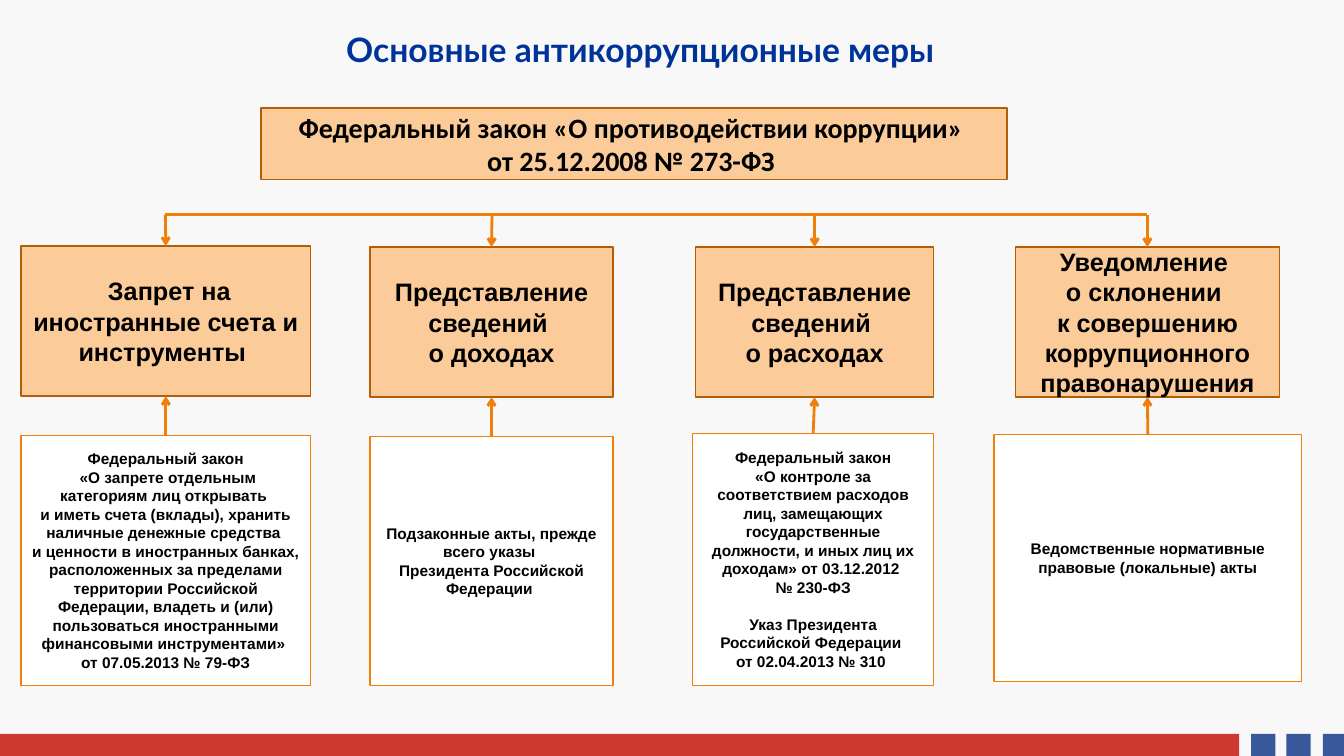
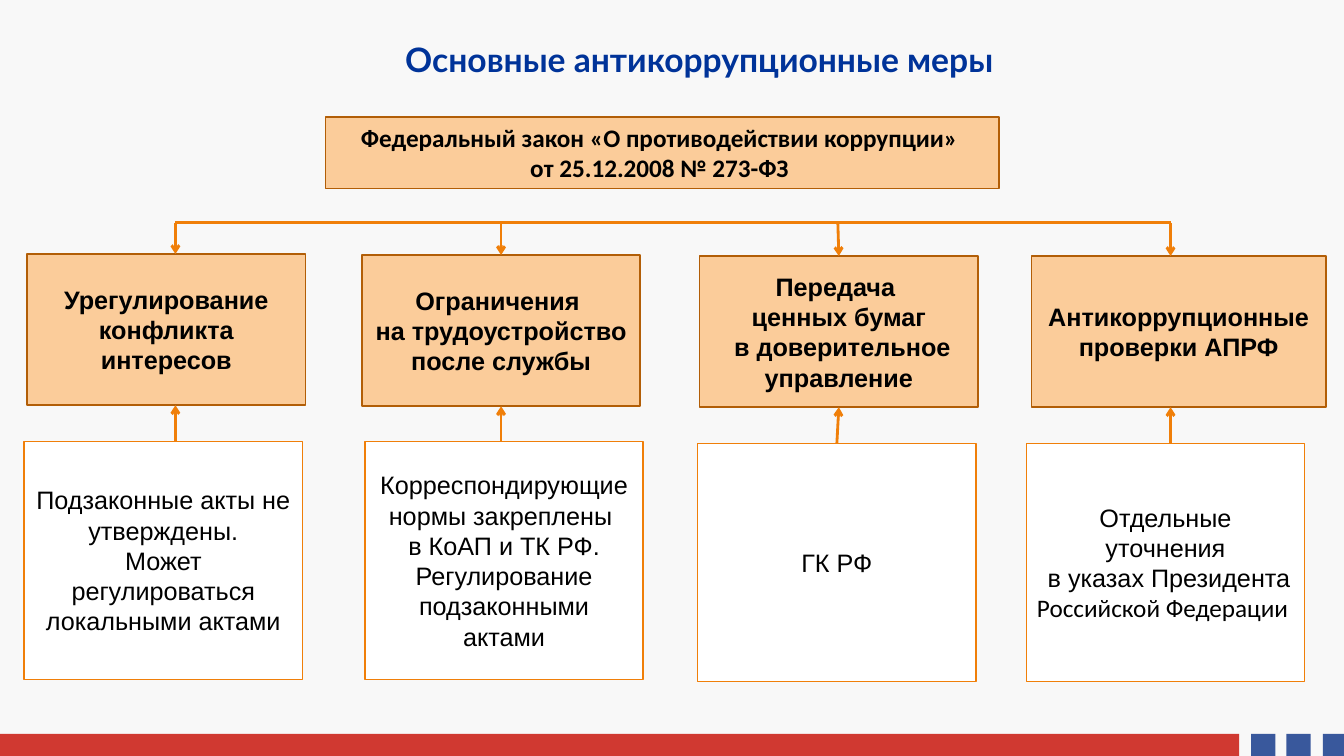
import dataclasses

import pptx
import pptx.dml.color
import pptx.enum.shapes
import pptx.enum.text
import pptx.oxml.ns
import pptx.oxml.xmlchemy
import pptx.shapes.autoshape
import pptx.shapes.connector
import pptx.slide
import pptx.text.text
import pptx.util

PX = 9144
SLIDE_WIDTH, SLIDE_HEIGHT = 1333, 750
BACKGROUND, BLACK, WHITE = "F8F8F8", "000000", "FFFFFF"
TITLE_BLUE, BAND_RED, BAND_BLUE = "003399", "C70A00", "0A3085"
PEACH, BROWN, ORANGE = "FBCC9A", "B25E07", "F07F09"
BAND_TOP, BAND_HEIGHT, BAND_OPACITY = 728, 22, 80
JOIN_TOLERANCE = 2
TITLE = "Основные антикоррупционные меры"
LAW = "Федеральный закон «О противодействии коррупции» \vот 25.12.2008 № 273-ФЗ "


@dataclasses.dataclass(frozen=True)
class Area:
    left: int
    top: int
    width: int
    height: int

    @property
    def middle(self) -> int:
        return self.left + self.width // 2

    @property
    def bottom(self) -> int:
        return self.top + self.height


@dataclasses.dataclass(frozen=True)
class Style:
    fill: str
    line: str
    size: int
    bold: bool = True
    font: str = "Arial"
    gap: int = 0


@dataclasses.dataclass(frozen=True)
class Box:
    area: Area
    text: str
    calibri_ending: str = ""


@dataclasses.dataclass(frozen=True)
class Column:
    axis: int
    measure: Box
    act: Box


@dataclasses.dataclass(frozen=True)
class Scheme:
    title: Area
    law: Area
    law_size: int
    bus_top: int
    act_style: Style
    columns: tuple[Column, ...]


MEASURE_STYLE = Style(PEACH, BROWN, 18)

SCHEMES = (
    Scheme(
        title=Area(157, 29, 956, 39),
        law=Area(259, 107, 740, 71),
        law_size=20,
        bus_top=213,
        act_style=Style(WHITE, ORANGE, 11, gap=13),
        columns=(
            Column(
                164,
                Box(Area(21, 244, 287, 149), " Запрет на иностранные счета и инструменты "),
                Box(
                    Area(21, 432, 287, 248),
                    "Федеральный закон\v «О запрете отдельным категориям лиц открывать \v"
                    "и иметь счета (вклады), хранить наличные денежные средства \v"
                    "и ценности в иностранных банках, расположенных за пределами территории "
                    "Российской Федерации, владеть и (или) пользоваться иностранными "
                    "финансовыми инструментами» \vот 07.05.2013 № 79-ФЗ",
                ),
            ),
            Column(
                488,
                Box(Area(367, 245, 241, 149), "Представление сведений \vо доходах"),
                Box(
                    Area(367, 433, 241, 247),
                    "Подзаконные акты, прежде всего указы \vПрезидента Российской Федерации ",
                ),
            ),
            Column(
                808,
                Box(Area(690, 245, 236, 149), "Представление сведений \vо расходах"),
                Box(
                    Area(687, 430, 239, 250),
                    "Федеральный закон\v«О контроле за соответствием расходов лиц, замещающих "
                    "государственные должности, и иных лиц их доходам» от 03.12.2012 \v№ 230-ФЗ\n"
                    "Указ Президента Российской Федерации \vот 02.04.2013 № 310 ",
                ),
            ),
            Column(
                1138,
                Box(
                    Area(1007, 245, 262, 149),
                    "Уведомление \vо склонении \vк совершению коррупционного правонарушения",
                ),
                Box(
                    Area(986, 431, 305, 245),
                    "Ведомственные нормативные правовые (локальные) акты",
                ),
            ),
        ),
    ),
    Scheme(
        title=Area(94, 16, 1199, 86),
        law=Area(323, 116, 668, 71),
        law_size=18,
        bus_top=221,
        act_style=Style(WHITE, ORANGE, 18, bold=False),
        columns=(
            Column(
                174,
                Box(Area(27, 252, 276, 150), "Урегулирование конфликта интересов"),
                Box(
                    Area(24, 438, 276, 236),
                    "Подзаконные акты не утверждены.\nМожет регулироваться локальными актами",
                ),
            ),
            Column(
                497,
                Box(Area(359, 253, 276, 150), "Ограничения \vна трудоустройство после службы"),
                Box(
                    Area(362, 438, 276, 236),
                    "Корреспондирующие нормы закреплены \n"
                    "в КоАП и ТК РФ. Регулирование подзаконными актами",
                ),
            ),
            Column(
                831,
                Box(Area(694, 254, 276, 150), "Передача \vценных бумаг\n в доверительное управление"),
                Box(Area(692, 440, 276, 236), "ГК РФ"),
            ),
            Column(
                1161,
                Box(Area(1023, 254, 292, 150), "Антикоррупционные проверки АПРФ"),
                Box(
                    Area(1018, 440, 276, 236),
                    "Отдельные уточнения\n в указах Президента ",
                    "Российской Федерации ",
                ),
            ),
        ),
    ),
)


def color(value: str) -> pptx.dml.color.RGBColor:
    return pptx.dml.color.RGBColor.from_string(value)


def format_text(
    text_frame: pptx.text.text.TextFrame, font: str, size: int, bold: bool, text_color: str, gap: int = 0
) -> None:
    text_frame.word_wrap = True
    text_frame.auto_size = pptx.enum.text.MSO_AUTO_SIZE.NONE
    text_frame.vertical_anchor = pptx.enum.text.MSO_ANCHOR.MIDDLE
    for index, paragraph in enumerate(text_frame.paragraphs):
        paragraph.alignment = pptx.enum.text.PP_ALIGN.CENTER
        if index and gap:
            paragraph.space_before = pptx.util.Pt(gap)
        for run in paragraph.runs:
            run.font.name = font
            run.font.size = pptx.util.Pt(size)
            run.font.bold = bold
            run.font.color.rgb = color(text_color)


def add_rectangle(slide: pptx.slide.Slide, area: Area, fill: str) -> pptx.shapes.autoshape.Shape:
    shape = slide.shapes.add_shape(
        pptx.enum.shapes.MSO_SHAPE.RECTANGLE,
        *(length * PX for length in dataclasses.astuple(area)),
    )
    shape.shadow.inherit = False
    shape.fill.solid()
    shape.fill.fore_color.rgb = color(fill)
    shape.line.fill.background()
    return shape


def add_box(slide: pptx.slide.Slide, box: Box, style: Style) -> pptx.shapes.autoshape.Shape:
    shape = add_rectangle(slide, box.area, style.fill)
    shape.line.color.rgb = color(style.line)
    shape.line.width = pptx.util.Pt(1)
    text_frame = shape.text_frame
    text_frame.text = box.text
    if box.calibri_ending:
        text_frame.paragraphs[-1].add_run().text = box.calibri_ending
    format_text(text_frame, style.font, style.size, style.bold, BLACK, style.gap)
    if box.calibri_ending:
        text_frame.paragraphs[-1].runs[-1].font.name = "Calibri"
    return shape


def add_line(
    slide: pptx.slide.Slide, start: tuple[int, int], end: tuple[int, int], arrow: bool
) -> pptx.shapes.connector.Connector:
    connector = slide.shapes.add_connector(
        pptx.enum.shapes.MSO_CONNECTOR.STRAIGHT, *(length * PX for length in start + end)
    )
    connector.line.color.rgb = color(ORANGE)
    connector.line.width = pptx.util.Pt(2)
    properties = connector.element.spPr
    if arrow:
        head = pptx.oxml.xmlchemy.OxmlElement("a:tailEnd")
        head.set("type", "arrow")
        properties.find(pptx.oxml.ns.qn("a:ln")).append(head)
    properties.append(pptx.oxml.xmlchemy.OxmlElement("a:effectLst"))
    return connector


def add_column(slide: pptx.slide.Slide, column: Column, bus_top: int, act_style: Style) -> None:
    measure_area, act_area = column.measure.area, column.act.area
    measure = add_box(slide, column.measure, MEASURE_STYLE)
    act = add_box(slide, column.act, act_style)
    down = add_line(slide, (column.axis, bus_top), (column.axis, measure_area.top), True)
    up = add_line(slide, (column.axis, act_area.top), (column.axis, measure_area.bottom), True)
    if abs(measure_area.middle - column.axis) <= JOIN_TOLERANCE:
        down.end_connect(measure, 0)
        up.end_connect(measure, 2)
    if abs(act_area.middle - column.axis) <= JOIN_TOLERANCE:
        up.begin_connect(act, 0)


def add_scheme(slide: pptx.slide.Slide, scheme: Scheme) -> None:
    title = slide.shapes.title
    title.left, title.top, title.width, title.height = (
        length * PX for length in dataclasses.astuple(scheme.title)
    )
    title.text_frame.text = TITLE
    format_text(title.text_frame, "Lato", 24, True, TITLE_BLUE)
    law_style = Style(PEACH, BROWN, scheme.law_size, font="Calibri")
    add_box(slide, Box(scheme.law, LAW), law_style)
    first, last = scheme.columns[0].axis, scheme.columns[-1].axis
    add_line(slide, (first, scheme.bus_top), (last, scheme.bus_top), False)
    for column in scheme.columns:
        add_column(slide, column, scheme.bus_top, scheme.act_style)


def add_footer_band(layout: pptx.slide.SlideLayout, slide: pptx.slide.Slide) -> None:
    bands = [(0, 1229, BAND_RED)]
    for index in range(3):
        left = 1241 + index * 71 // 2
        bands.append((left, min(24, SLIDE_WIDTH - left), BAND_BLUE))
    for number, (left, width, fill) in enumerate(bands, start=20):
        shape = add_rectangle(slide, Area(left, BAND_TOP, width, BAND_HEIGHT), fill)
        alpha = pptx.oxml.xmlchemy.OxmlElement("a:alpha")
        alpha.set("val", str(BAND_OPACITY * 1000))
        shape.element.spPr.find(".//" + pptx.oxml.ns.qn("a:srgbClr")).append(alpha)
        shape.element.nvSpPr.cNvPr.set("id", str(number))
        layout.shapes.element.append(shape.element)


def main() -> None:
    presentation = pptx.Presentation()
    presentation.slide_width = SLIDE_WIDTH * PX
    presentation.slide_height = SLIDE_HEIGHT * PX
    layout = presentation.slide_layouts[5]
    layout.background.fill.solid()
    layout.background.fill.fore_color.rgb = color(BACKGROUND)
    slides = [presentation.slides.add_slide(layout) for _ in SCHEMES]
    add_footer_band(layout, slides[0])
    for slide, scheme in zip(slides, SCHEMES):
        add_scheme(slide, scheme)
    presentation.save("out.pptx")


if __name__ == "__main__":
    main()
